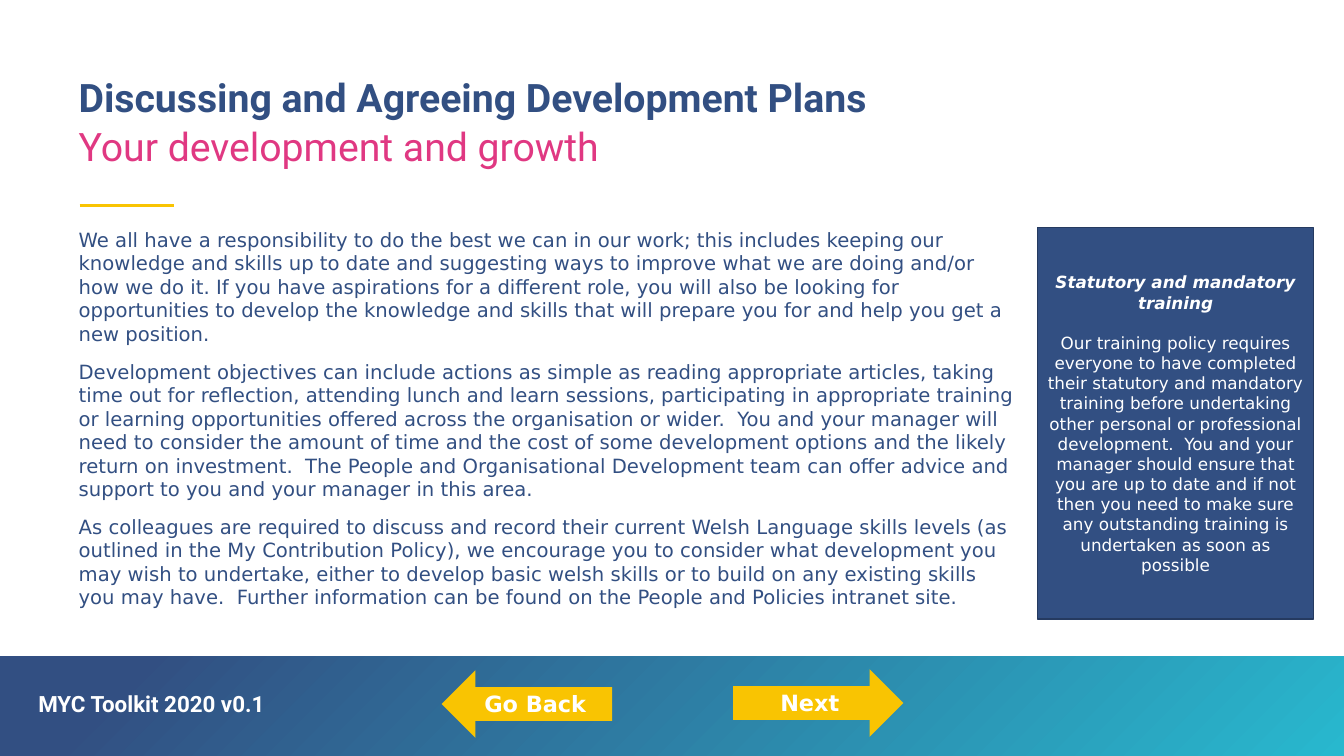
from pptx import Presentation
from pptx.dml.color import RGBColor
from pptx.enum.shapes import MSO_CONNECTOR, MSO_SHAPE
from pptx.enum.text import MSO_ANCHOR, PP_ALIGN
from pptx.oxml.ns import qn
from pptx.util import Inches, Pt
from lxml.etree import SubElement

HUES = {"navy": "324F82", "edge": "253A60", "teal": "28B8CE",
        "pink": "E03882", "gold": "F9C402", "white": "FFFFFF"}
SANS, HEAD = "DejaVu Sans", "Roboto"
WIDE, HIGH = 13.33, 7.5
LEFT = 0.78
TOP = 2.26

BODY = [
    "We all have a responsibility to do the best we can in our work; this includes keeping our knowledge and skills up to date and suggesting ways to improve what we are doing and/or how we do it. If you have aspirations for a different role, you will also be looking for opportunities to develop the knowledge and skills that will prepare you for and help you get a new position.",
    "Development objectives can include actions as simple as reading appropriate articles, taking time out for reflection, attending lunch and learn sessions, participating in appropriate training or learning opportunities offered across the organisation or wider.  You and your manager will need to consider the amount of time and the cost of some development options and the likely return on investment.  The People and Organisational Development team can offer advice and support to you and your manager in this area.",
    "As colleagues are required to discuss and record their current Welsh Language skills levels (as outlined in the My Contribution Policy), we encourage you to consider what development you may wish to undertake, either to develop basic welsh skills or to build on any existing skills you may have.  Further information can be found on the People and Policies intranet site.",
]
NOTE = [
    "Statutory and mandatory training",
    "Our training policy requires everyone to have completed their statutory and mandatory training before undertaking other personal or professional development.  You and your manager should ensure that you are up to date and if not then you need to make sure any outstanding training is undertaken as soon as possible",
]


def tint(hue):
    return RGBColor.from_string(HUES[hue])


def write(shape, lines, size, hue, font=SANS, bold=False, gap=10, lead=None, align=PP_ALIGN.LEFT):
    frame = shape.text_frame
    frame.word_wrap = True
    frame.text = "\n".join(lines)
    for row, para in enumerate(frame.paragraphs):
        para.alignment = align
        para.space_before = Pt(gap if row else 0)
        if lead:
            para.line_spacing = lead
        for run in para.runs:
            run.font.name = font
            run.font.size = Pt(size)
            run.font.bold = bold
            run.font.color.rgb = tint(hue)
    return frame


def label(slide, box, lines, *style, **more):
    shape = slide.shapes.add_textbox(*map(Inches, box))
    frame = write(shape, lines, *style, **more)
    frame.margin_left = frame.margin_right = 0
    frame.margin_top = frame.margin_bottom = 0


def block(slide, kind, box, hue):
    shape = slide.shapes.add_shape(kind, *map(Inches, box))
    shape.shadow.inherit = False
    shape.fill.solid()
    shape.fill.fore_color.rgb = tint(hue)
    shape.line.fill.background()
    shape.text_frame.vertical_anchor = MSO_ANCHOR.MIDDLE
    return shape


def header(slide, box):
    x, y, w, h = box
    rows = [("Discussing and Agreeing Development Plans", "navy", True),
            ("Your development and growth", "pink", False)]
    for row, (text, hue, bold) in enumerate(rows):
        label(slide, (x, y + row * 0.49, w, 0.43), [text], 28, hue, HEAD, bold, lead=0.9)
    ends = x + 0.01, y + h, x + 0.95, y + h
    rule = slide.shapes.add_connector(MSO_CONNECTOR.STRAIGHT, *map(Inches, ends))
    rule.line.color.rgb = tint("gold")
    rule.line.width = Pt(2.25)
    SubElement(rule._element.spPr, qn("a:effectLst"))


def panel(slide, box):
    shape = block(slide, MSO_SHAPE.RECTANGLE, box, "navy")
    shape.line.color.rgb = tint("edge")
    shape.line.width = Pt(1)
    frame = write(shape, NOTE, 12, "white", gap=14.4, align=PP_ALIGN.CENTER)
    title = frame.paragraphs[0].runs[0].font
    title.bold = title.italic = True


def footer(slide, box):
    x, y, w, h = box
    band = block(slide, MSO_SHAPE.RECTANGLE, box, "navy")
    band.fill.gradient()
    band.fill.gradient_angle = 315
    for stop, (hue, place) in zip(band.fill.gradient_stops, [("navy", 0.1), ("teal", 1)]):
        stop.color.rgb = tint(hue)
        stop.position = place
    arrows = [("Go Back", MSO_SHAPE.LEFT_ARROW, 4.38, 0.14),
              ("Next", MSO_SHAPE.RIGHT_ARROW, 7.27, 0.13)]
    for text, kind, left, drop in arrows:
        arrow = block(slide, kind, (x + left, y + drop, 1.69, 0.67), "gold")
        write(arrow, [text], 16, "white", bold=True, align=PP_ALIGN.CENTER)
    label(slide, (x + 0.38, y + 0.37, 3.9, 0.24), ["MYC Toolkit 2020 v0.1"],
          16, "white", HEAD, True, lead=0.9)


def main():
    deck = Presentation()
    deck.slide_width, deck.slide_height = Inches(WIDE), Inches(HIGH)
    slide = deck.slides.add_slide(deck.slide_layouts[6])
    footer(slide, (0, 6.51, WIDE, HIGH - 6.51))
    header(slide, (LEFT, LEFT, WIDE - 2 * LEFT, 1.26))
    label(slide, (LEFT, TOP, 9.28, 3.88), BODY, 14, "navy")
    panel(slide, (10.29, TOP, 2.74, 3.88))
    deck.save("out.pptx")


if __name__ == "__main__":
    main()
